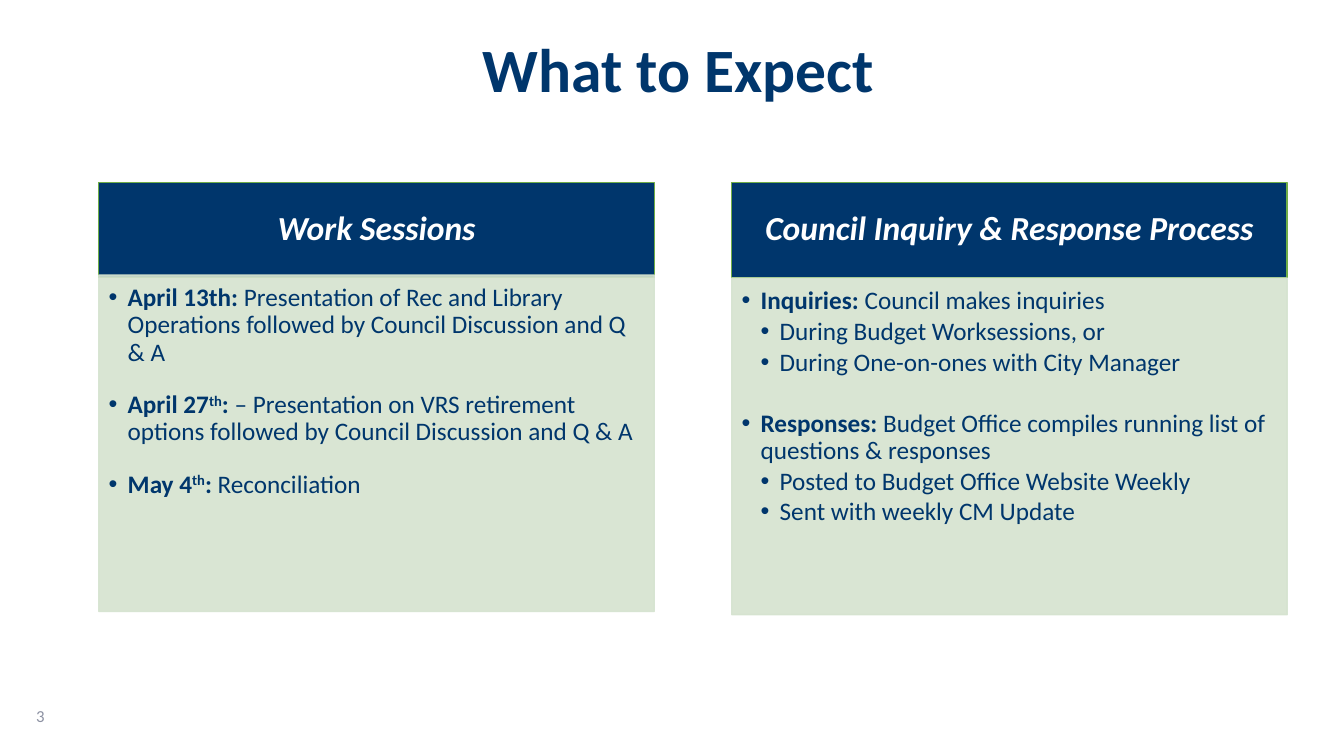
from dataclasses import dataclass

from lxml import etree
from pptx import Presentation
from pptx.dml.color import RGBColor
from pptx.enum.shapes import MSO_SHAPE
from pptx.enum.text import MSO_ANCHOR, PP_ALIGN
from pptx.oxml.ns import qn
from pptx.util import Cm, Pt

RECT = MSO_SHAPE.RECTANGLE
MIDDLE, TOP = MSO_ANCHOR.MIDDLE, MSO_ANCHOR.TOP
CENTER, LEFT = PP_ALIGN.CENTER, PP_ALIGN.LEFT
COLORS = {"navy": "00366C", "green": "70AD47", "sage": "D5E3CF",
          "white": "FFFFFF", "gray": "8C91A2"}
FONT = "Calibri"
PANEL_WIDTH, HEADER_TOP, HEADER_HEIGHT, BODY_HEIGHT = 14, 4.6, 2.39, 8.48
INDENT = 0.48


@dataclass
class Item:
    lead: str
    text: str
    after: float
    level: int = 0
    ordinal: str = ""
    lead_end: str = ""


@dataclass
class Panel:
    title: str
    left: float
    body_top: float
    items: list[Item]


PANELS = [
    Panel("Work Sessions", 2.49, 6.93, [
        Item("April 13th:", " Presentation of Rec and Library Operations followed by "
             "Council Discussion and Q & A", 18),
        Item("April 27", "– Presentation on VRS retirement options followed by "
             "Council Discussion and Q & A", 18, ordinal="th", lead_end=": "),
        Item("May 4", "Reconciliation", 18, ordinal="th", lead_end=": "),
    ]),
    Panel("Council Inquiry & Response Process", 18.44, 7.01, [
        Item("Inquiries: ", "Council makes inquiries", 2.5),
        Item("", "During Budget Worksessions, or", 2.5, 1),
        Item("", "During One-on-ones with City Manager", 24, 1),
        Item("Responses: ", "Budget Office compiles running list of "
             "questions & responses", 2.5),
        Item("", "Posted to Budget Office Website Weekly", 2.5, 1),
        Item("", "Sent with weekly CM Update", 2.5, 1),
    ]),
]


def rgb(name: str) -> RGBColor:
    return RGBColor.from_string(COLORS[name])


def add_run(p, text: str, size: float, color: str, **formats):
    r = p.add_run()
    r.text = text
    for name, value in {"name": FONT, "size": Pt(size), **formats}.items():
        setattr(r.font, name, value)
    r.font.color.rgb = rgb(color)
    return r


def set_frame(tf, anchor, margins: tuple[float, float, float, float]) -> None:
    tf.word_wrap = True
    tf.vertical_anchor = anchor
    sides = ("left", "top", "right", "bottom")
    for side, value in zip(sides, margins):
        setattr(tf, f"margin_{side}", Cm(value))


def add_box(s, left: float, top: float, height: float, fill: str, line: str):
    sp = s.shapes.add_shape(RECT, Cm(left), Cm(top), Cm(PANEL_WIDTH), Cm(height))
    sp.shadow.inherit = False
    sp.fill.solid()
    sp.fill.fore_color.rgb = rgb(fill)
    sp.line.color.rgb = rgb(line)
    sp.line.width = Pt(1)
    return sp


def add_item(p, item: Item) -> None:
    p.alignment = LEFT
    p.level = item.level
    p.line_spacing = 0.9
    p.space_after = Pt(item.after)
    pPr = p._p.get_or_add_pPr()
    pPr.set("marL", str(Cm(INDENT * (item.level + 1))))
    pPr.set("indent", str(-Cm(INDENT)))
    etree.SubElement(pPr, qn("a:buFont"), typeface="Arial")
    etree.SubElement(pPr, qn("a:buChar"), char="•")
    if item.lead:
        add_run(p, item.lead, 18, "navy", bold=True)
    if item.ordinal:
        r = add_run(p, item.ordinal, 18, "navy", bold=True)
        r._r.get_or_add_rPr().set("baseline", "30000")
        add_run(p, item.lead_end, 18, "navy", bold=True)
    add_run(p, item.text, 18, "navy", bold=False)


def add_panel(s, panel: Panel) -> None:
    # Header bar
    sp = add_box(s, panel.left, HEADER_TOP, HEADER_HEIGHT, "navy", "green")
    set_frame(sp.text_frame, MIDDLE, (0.48, 0.28, 0.48, 0.28))
    p = sp.text_frame.paragraphs[0]
    p.alignment = CENTER
    p.line_spacing = 0.9
    add_run(p, panel.title, 24, "white", bold=True, italic=True)

    # Slightly transparent body with bullets
    sp = add_box(s, panel.left, panel.body_top, BODY_HEIGHT, "sage", "sage")
    for color in sp._element.spPr.iter(qn("a:srgbClr")):
        etree.SubElement(color, qn("a:alpha"), val="90000")
    tf = sp.text_frame
    set_frame(tf, TOP, (0.25, 0.25, 0.36, 0.41))
    for i, item in enumerate(panel.items):
        add_item(tf.add_paragraph() if i else tf.paragraphs[0], item)


def main() -> None:
    prs = Presentation()
    prs.slide_width, prs.slide_height = Cm(33.87), Cm(19.05)
    s = prs.slides.add_slide(prs.slide_layouts[5])

    # Title
    title = s.shapes.title
    title.left, title.top, title.width, title.height = Cm(2.49), Cm(0), Cm(29.21), Cm(3.68)
    set_frame(title.text_frame, MIDDLE, (0.25, 0.13, 0.25, 0.13))
    p = title.text_frame.paragraphs[0]
    p.alignment = CENTER
    p.line_spacing = 0.9
    add_run(p, "What to Expect", 44, "navy", bold=True)

    # Page number
    number = s.shapes.add_textbox(Cm(0.66), Cm(17.53), Cm(7.62), Cm(1.02))
    set_frame(number.text_frame, MIDDLE, (0.25, 0.13, 0.25, 0.13))
    add_run(number.text_frame.paragraphs[0], "3", 12, "gray")

    # Two panels
    for panel in PANELS:
        add_panel(s, panel)

    prs.save("out.pptx")


if __name__ == "__main__":
    main()
